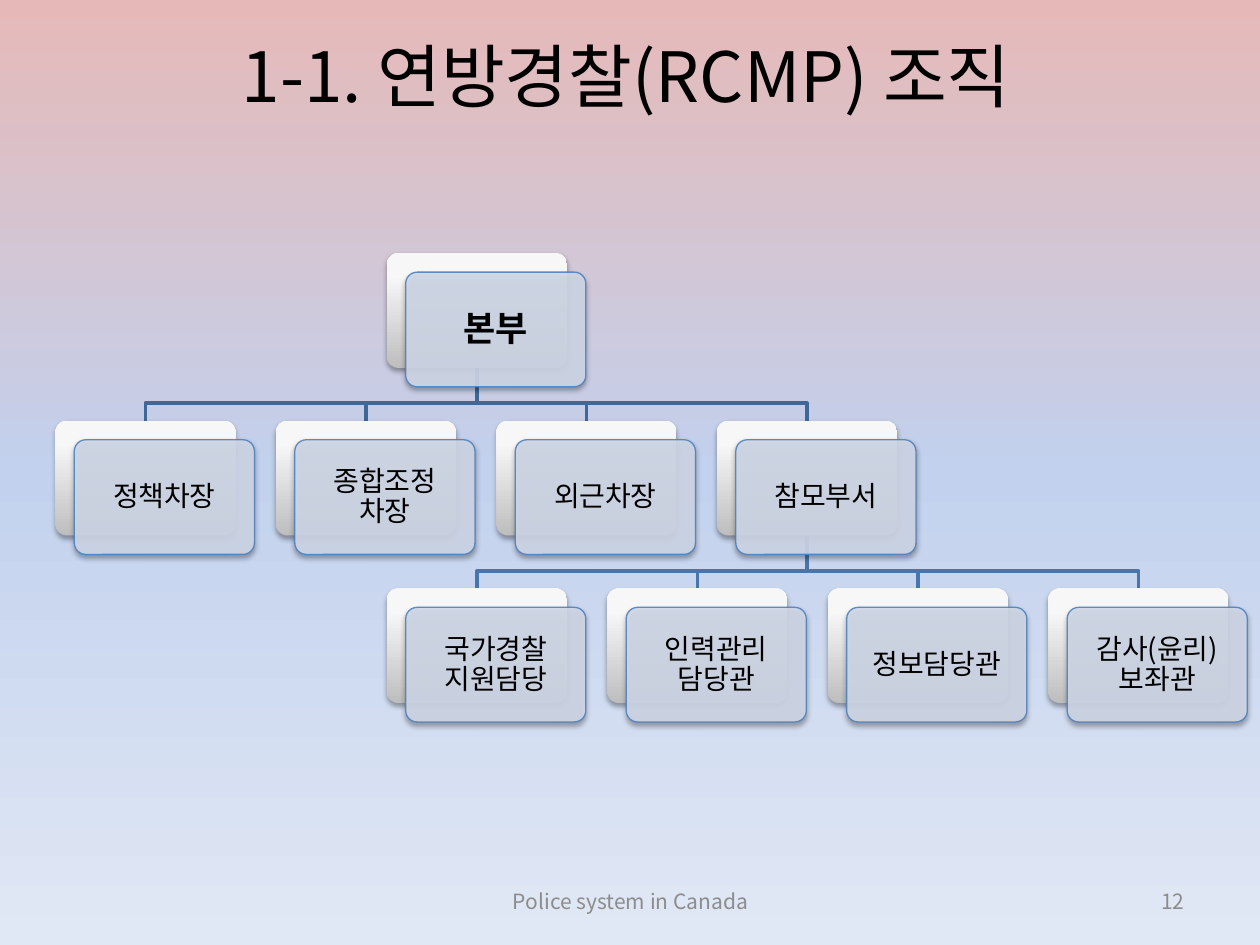
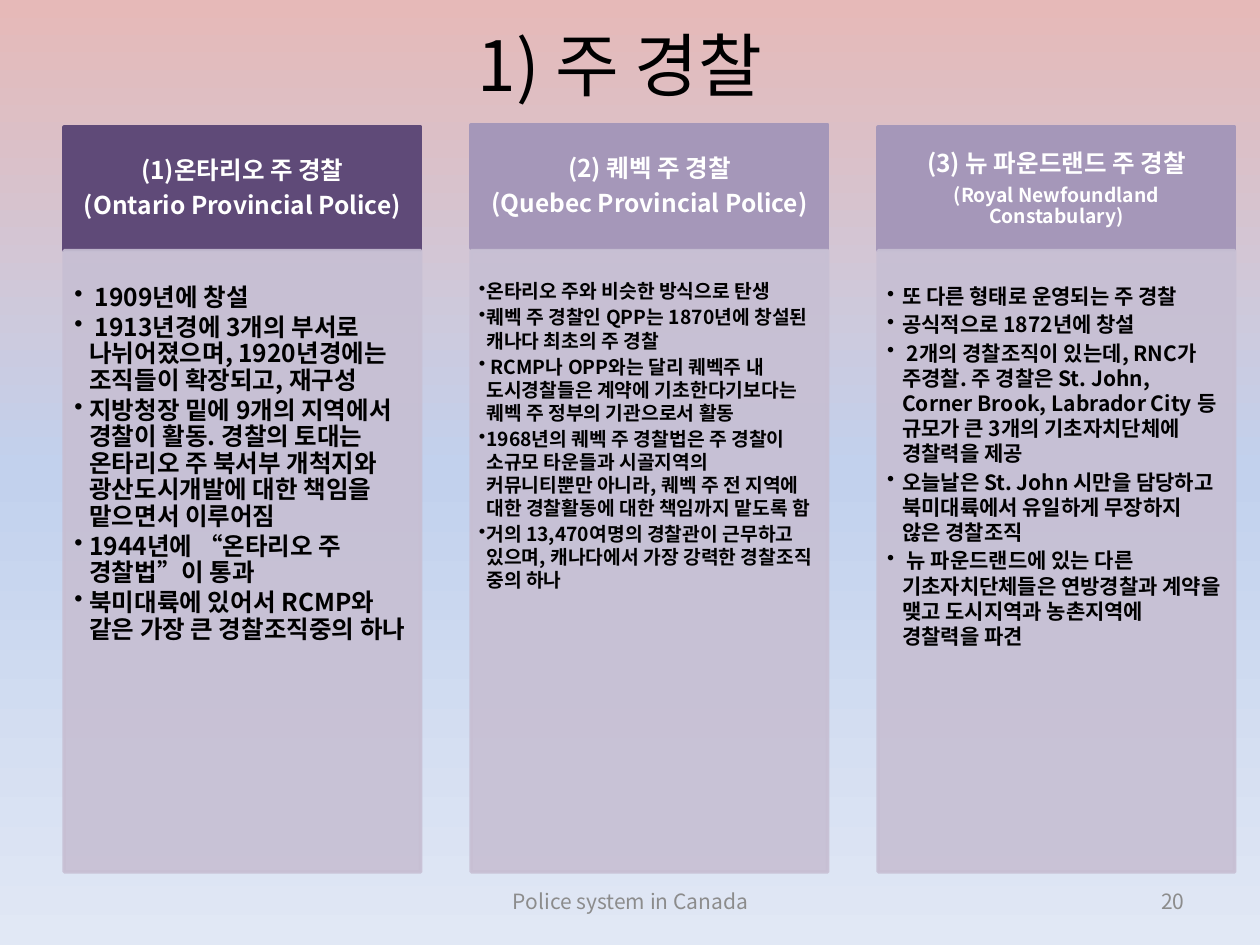
from lxml.etree import SubElement
from pptx import Presentation
from pptx.dml.color import RGBColor
from pptx.enum.shapes import MSO_SHAPE as Preset
from pptx.enum.text import MSO_ANCHOR as Anchor, MSO_AUTO_SIZE as AutoSize, PP_ALIGN as Align
from pptx.oxml.ns import qn
from pptx.util import Inches, Pt

FONT = "Noto Sans CJK KR"
BLACK = RGBColor(0x00, 0x00, 0x00)
WHITE = RGBColor(0xFF, 0xFF, 0xFF)
FOOTER_GRAY = RGBColor(0x8C, 0x8C, 0x8C)
CARD_BLUE = RGBColor(0xD0, 0xD8, 0xE8)
CARD_EDGE = RGBColor(0x4F, 0x81, 0xBD)
UPPER_BRANCH = RGBColor(0x3F, 0x67, 0x97)
LOWER_BRANCH = RGBColor(0x48, 0x75, 0xAC)
DARK_PURPLE = RGBColor(0x5F, 0x4A, 0x78)
MID_PURPLE = RGBColor(0xA5, 0x97, 0xB9)
PALE_PURPLE = RGBColor(0xC7, 0xBF, 0xD3)
SKY = [
    (0, RGBColor(0xE6, 0xB9, 0xB8)),
    (50, RGBColor(0xC2, 0xD1, 0xED)),
    (100, RGBColor(0xE1, 0xE8, 0xF5)),
]
SILVER = [
    (0, RGBColor(0xBE, 0xBE, 0xBE)),
    (80, RGBColor(0xF7, 0xF7, 0xF7)),
    (100, RGBColor(0xF8, 0xF8, 0xF8)),
]

LINE_HEIGHT = 1.2
CARD_W, CARD_H = 1.43, 0.91
CARD_STEP, ROW_STEP, CARD_OFFSET = 1.75, 1.33, 0.15
TREE_TOP, BRANCH_DROP = 2.01, 0.28
COLUMN_LEFT, COLUMN_STEP, COLUMN_W = 0.51, 3.23, 2.83
HEADER_H, BODY_TOP, BODY_H = 0.98, 1.99, 4.93

DEPUTIES = ["정책차장", "종합조정\v차장", "외근차장", "참모부서"]
STAFF = ["국가경찰 지원담당", "인력관리 담당관", "정보담당관", "감사(윤리) 보좌관"]

PROVINCES = [
    dict(
        heading=["(1)온타리오 주 경찰", "(Ontario Provincial Police)"],
        english_size=14, top=1.01, color=DARK_PURPLE,
        body=dict(size=14, spacing=0.9, indent=0.12, insets=(0.08, 0.27, 0.11, 0.12)),
        facts=[
            " 1909년에 창설",
            " 1913년경에 3개의 부서로 나뉘어졌으며, 1920년경에는 조직들이 확장되고, 재구성",
            "지방청장 밑에 9개의 지역에서 경찰이 활동. 경찰의 토대는 온타리오 주 북서부 "
            "개척지와 광산도시개발에 대한 책임을 맡으면서 이루어짐",
            "1944년에 “온타리오 주 경찰법”이 통과",
            "북미대륙에 있어서 RCMP와 같은 가장 큰 경찰조직중의 하나",
        ],
    ),
    dict(
        heading=["(2) 퀘벡 주 경찰", "(Quebec Provincial Police)"],
        english_size=14, top=0.99, color=MID_PURPLE,
        body=dict(size=11, indent=0.06, insets=(0.06, 0.23, 0.09, 0.1)),
        facts=[
            "온타리오 주와 비슷한 방식으로 탄생",
            "퀘벡 주 경찰인 QPP는 1870년에 창설된 캐나다 최초의 주 경찰",
            " RCMP나 OPP와는 달리 퀘벡주 내 도시경찰들은 계약에 기초한다기보다는 "
            "퀘벡 주 정부의 기관으로서 활동",
            "1968년의 퀘벡 주 경찰법은 주 경찰이 소규모 타운들과 시골지역의 커뮤니티뿐만 "
            "아니라, 퀘벡 주 전 지역에 대한 경찰활동에 대한 책임까지 맡도록 함",
            "거의 13,470여명의 경찰관이 근무하고 있으며, 캐나다에서 가장 강력한 "
            "경찰조직 중의 하나",
        ],
    ),
    dict(
        heading=["(3) 뉴 파운드랜드 주 경찰", "(Royal Newfoundland Constabulary)"],
        english_size=11, top=1.01, color=MID_PURPLE,
        body=dict(size=12, indent=0.12, insets=(0.07, 0.26, 0.09, 0.1)),
        facts=[
            "또 다른 형태로 운영되는 주 경찰",
            "공식적으로 1872년에 창설",
            " 2개의 경찰조직이 있는데, RNC가 주경찰. 주 경찰은 St. John, Corner Brook, "
            "Labrador City 등 규모가 큰 3개의 기초자치단체에 경찰력을 제공",
            "오늘날은 St. John 시만을 담당하고 북미대륙에서 유일하게 무장하지 않은 경찰조직",
            " 뉴 파운드랜드에 있는 다른 기초자치단체들은 연방경찰과 계약을 맺고 "
            "도시지역과 농촌지역에 경찰력을 파견",
        ],
    ),
]


def write(frame, lines, size, color=BLACK, bold=False, align=Align.CENTER,
          anchor=Anchor.MIDDLE, insets=(0.1, 0.05, 0.1, 0.05), spacing=1,
          after=0, indent=None, last_size=None):
    frame.word_wrap = True
    frame.auto_size = AutoSize.NONE
    frame.vertical_anchor = anchor
    (frame.margin_left, frame.margin_top,
     frame.margin_right, frame.margin_bottom) = map(Inches, insets)
    for index, line in enumerate(lines):
        paragraph = frame.add_paragraph() if index else frame.paragraphs[0]
        paragraph.text = line
        paragraph.alignment = align
        points = last_size if last_size and index == len(lines) - 1 else size
        paragraph.line_spacing = Pt(points * LINE_HEIGHT * spacing)
        paragraph.space_before = Pt(0)
        paragraph.space_after = Pt(points * after)
        if indent:
            add_bullet(paragraph, indent)
        for run in paragraph.runs:
            run.font.size = Pt(points)
            run.font.bold = bold
            run.font.color.rgb = color
            run.font.name = FONT
            SubElement(run.font._element, qn("a:ea"), typeface=FONT)


def add_bullet(paragraph, indent):
    properties = paragraph._p.get_or_add_pPr()
    properties.set("marL", str(Inches(indent)))
    properties.set("indent", str(-Inches(indent)))
    SubElement(properties, qn("a:buChar"), char="•")


def paint_gradient(fill, element, stops, angle):
    fill.gradient()
    gradient = element.find(".//" + qn("a:gradFill"))
    for child in list(gradient):
        gradient.remove(child)
    stop_list = SubElement(gradient, qn("a:gsLst"))
    for position, color in stops:
        stop = SubElement(stop_list, qn("a:gs"), pos=str(position * 1000))
        SubElement(stop, qn("a:srgbClr"), val=str(color))
    SubElement(gradient, qn("a:lin"), ang=str(angle * 60000), scaled="0")


def make_translucent(shape, percent):
    for color in shape.element.spPr.iter(qn("a:srgbClr")):
        SubElement(color, qn("a:alpha"), val=str(percent * 1000))


def add_soft_shadow(shape):
    effects = shape.element.spPr.find(qn("a:effectLst"))
    shadow = SubElement(effects, qn("a:outerShdw"), blurRad=str(Pt(3.1)),
                        dist=str(Pt(1.8)), dir="5400000", rotWithShape="0")
    color = SubElement(shadow, qn("a:srgbClr"), val=str(BLACK))
    SubElement(color, qn("a:alpha"), val="35000")


def add_box(slide, preset, left, top, width, height, fill=None, edge=None, weight=2):
    box = slide.shapes.add_shape(preset, *map(Inches, (left, top, width, height)))
    box.shadow.inherit = False
    if fill:
        box.fill.solid()
        box.fill.fore_color.rgb = fill
    if edge:
        box.line.color.rgb = edge
        box.line.width = Pt(weight)
    else:
        box.line.fill.background()
    return box


def add_card(slide, left, top, label, **text_format):
    back = add_box(slide, Preset.ROUNDED_RECTANGLE, left, top, CARD_W, CARD_H)
    paint_gradient(back.fill, back.element, SILVER, 270)
    front = add_box(slide, Preset.ROUNDED_RECTANGLE, left + CARD_OFFSET, top + CARD_OFFSET,
                    CARD_W, CARD_H, CARD_BLUE, CARD_EDGE, 0.75)
    make_translucent(front, 90)
    for layer in (back, front):
        layer.adjustments[0] = 0.1
        add_soft_shadow(layer)
    write(front.text_frame, [label], spacing=0.9, after=0.35, **text_format)


def add_branch(slide, parent, child, color):
    start_x, end_x = parent[0] + CARD_W / 2, child[0] + CARD_W / 2
    start_y = parent[1] + CARD_H
    bend_y = start_y + BRANCH_DROP
    builder = slide.shapes.build_freeform(Inches(start_x), Inches(start_y))
    corners = [(start_x, bend_y), (end_x, bend_y), (end_x, child[1])]
    builder.add_line_segments([(Inches(x), Inches(y)) for x, y in corners], close=False)
    branch = builder.convert_to_shape()
    branch.shadow.inherit = False
    branch.fill.background()
    branch.line.color.rgb = color
    branch.line.width = Pt(2)


def add_footer_text(slide, text, left, width, align):
    box = slide.shapes.add_textbox(*map(Inches, (left, 6.95, width, 0.4)))
    write(box.text_frame, [text], size=12, color=FOOTER_GRAY, align=align)


def add_titled_slide(prs, title, title_area, number):
    slide = prs.slides.add_slide(prs.slide_layouts[5])
    heading = slide.shapes.title
    heading.left, heading.top, heading.width, heading.height = map(Inches, title_area)
    write(heading.text_frame, [title], size=39.6)
    add_footer_text(slide, "Police system in Canada", 3.42, 3.17, Align.CENTER)
    add_footer_text(slide, number, 7.17, 2.33, Align.RIGHT)
    return slide


def add_organization(slide):
    def card_row(left, row):
        return [(left + CARD_STEP * i, TREE_TOP + ROW_STEP * row) for i in range(4)]

    headquarters = (3.07, TREE_TOP)
    deputy_spots, staff_spots = card_row(0.44, 1), card_row(3.07, 2)
    for spot in reversed(staff_spots):
        add_branch(slide, deputy_spots[-1], spot, LOWER_BRANCH)
    for spot in reversed(deputy_spots):
        add_branch(slide, headquarters, spot, UPPER_BRANCH)
    add_card(slide, *headquarters, "본부", size=20, bold=True, insets=(0.08,) * 4)
    for spot, label in zip(deputy_spots + staff_spots, DEPUTIES + STAFF):
        add_card(slide, *spot, label, size=16, insets=(0.07,) * 4)


def add_province(slide, left, heading, english_size, top, color, body, facts):
    header = add_box(slide, Preset.RECTANGLE, left, top, COLUMN_W, HEADER_H, color, color)
    write(header.text_frame, heading, size=14, last_size=english_size, color=WHITE, bold=True,
          insets=(0.11, 0.06, 0.11, 0.06), spacing=0.9, after=0.35)
    panel = add_box(slide, Preset.RECTANGLE, left, BODY_TOP, COLUMN_W, BODY_H,
                    PALE_PURPLE, PALE_PURPLE)
    make_translucent(panel, 90)
    write(panel.text_frame, facts, bold=True, align=Align.LEFT, anchor=Anchor.TOP,
          after=0.15, **body)


def main():
    prs = Presentation()
    prs.slide_width, prs.slide_height = Inches(10), Inches(7.5)
    master = prs.slide_master
    paint_gradient(master.background.fill, master.element, SKY, 90)

    organization = add_titled_slide(prs, "1-1. 연방경찰(RCMP) 조직",
                                    (0.83, 0.21, 8.28, 0.77), "12")
    add_organization(organization)

    provincial = add_titled_slide(prs, "1) 주 경찰", (1.85, 0.13, 6.14, 0.76), "20")
    for index, province in enumerate(PROVINCES):
        add_province(provincial, COLUMN_LEFT + COLUMN_STEP * index, **province)

    prs.save("out.pptx")


if __name__ == "__main__":
    main()
